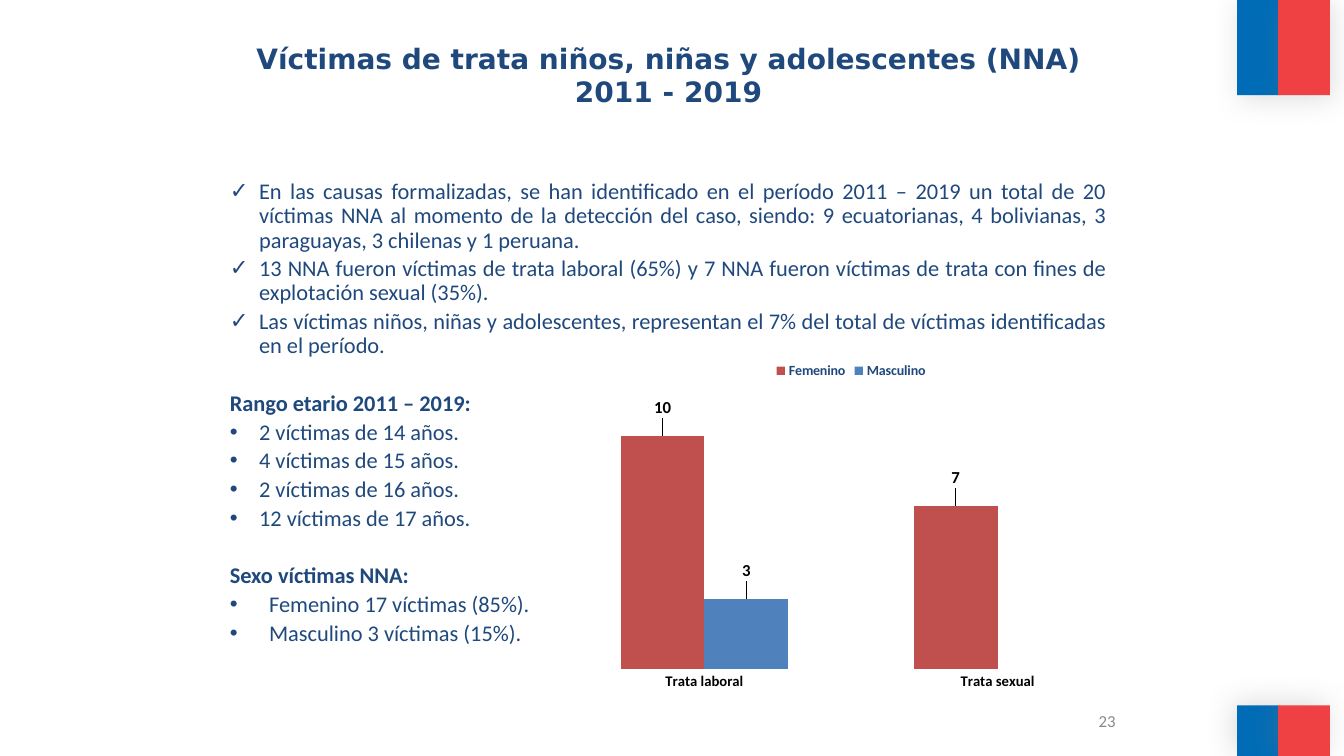
from copy import deepcopy

from pptx import Presentation
from pptx import util as u
from pptx.chart import data as chart_data
from pptx.dml.color import RGBColor
from pptx.enum import chart as ch, shapes, text
from pptx.oxml import parse_xml
from pptx.oxml.ns import nsdecls, qn

NAVY = RGBColor(0x1F, 0x49, 0x7D)
FLAG_BLUE = RGBColor(0x00, 0x6C, 0xB7)
FLAG_RED = RGBColor(0xEF, 0x41, 0x44)
GREY = RGBColor(0x89, 0x89, 0x89)
BLACK = RGBColor(0, 0, 0)
FEMALE_RED = RGBColor(0xC0, 0x50, 0x4D)
MALE_BLUE = RGBColor(0x4F, 0x81, 0xBD)

FINDINGS = [
    "En las causas formalizadas, se han identificado en el período 2011 – 2019 un total de 20 víctimas NNA "
    "al momento de la detección del caso, siendo: 9 ecuatorianas, 4 bolivianas, 3 paraguayas, 3 chilenas y 1 peruana.",
    "13 NNA fueron víctimas de trata laboral (65%) y 7 NNA fueron víctimas de trata con fines de explotación sexual (35%).",
    "Las víctimas niños, niñas y adolescentes, representan el 7% del total de víctimas identificadas en el período.",
]
AGES = [(2, 14), (4, 15), (2, 16), (12, 17)]
SEXES = ["Femenino 17 víctimas (85%).", "Masculino 3 víctimas (15%)."]


def style_font(font, size, color, bold=False, name="Calibri"):
    font.size, font.bold, font.name = u.Pt(size), bold, name
    font.color.rgb = color


def write(paragraph, words, size=16, color=NAVY, bold=False, name="Calibri",
          align=text.PP_ALIGN.JUSTIFY, bullet=None, indent=0, before=0, spacing=None):
    """Fill one paragraph and format it."""
    paragraph.text = words
    props = paragraph._p.get_or_add_pPr()
    props.set("marL", str(u.Inches(indent)))
    props.set("indent", str(-u.Inches(indent)))
    mark = f'<a:buChar {nsdecls("a")} char="{bullet}"/>' if bullet else f'<a:buNone {nsdecls("a")}/>'
    props.append(parse_xml(mark))
    paragraph.alignment = align
    paragraph.space_before = u.Pt(before)
    paragraph.line_spacing = spacing
    for run in paragraph.runs:
        style_font(run.font, size, color, bold, name)
    for line_break in paragraph._p.findall(qn("a:br")):
        line_break.insert(0, deepcopy(paragraph.runs[0]._r.rPr))


def manual_layout(**shares):
    parts = "".join(f'<c:{key} val="{value}"/>' for key, value in shares.items())
    return parse_xml(f'<c:layout {nsdecls("c")}><c:manualLayout>{parts}</c:manualLayout></c:layout>')


class SlideBuilder:
    """Places elements in percent of the slide's width and height."""

    def __init__(self, deck):
        self.width, self.height = deck.slide_width, deck.slide_height
        self.slide = deck.slides.add_slide(deck.slide_layouts[1])

    def area(self, x, y, w, h):
        return [round(share * side / 100) for share, side in
                zip((x, y, w, h), (self.width, self.height) * 2)]

    def placeholder(self, index, *area):
        holder = self.slide.placeholders[index]
        holder.left, holder.top, holder.width, holder.height = self.area(*area)
        frame = holder.text_frame
        frame.auto_size = text.MSO_AUTO_SIZE.NONE
        frame.vertical_anchor = text.MSO_ANCHOR.TOP
        return frame

    def flag_band(self, color, angle, *area):
        band = self.slide.shapes.add_shape(shapes.MSO_SHAPE.RECTANGLE, *self.area(*area))
        band.fill.solid()
        band.fill.fore_color.rgb = color
        band.line.fill.background()
        band.shadow.inherit = False
        band._element.spPr.find(qn("a:effectLst")).append(parse_xml(
            f'<a:outerShdw {nsdecls("a")} blurRad="{u.Pt(20)}" dist="{u.Pt(3)}" dir="{angle * 60000}" '
            'rotWithShape="0"><a:srgbClr val="808080"><a:alpha val="25000"/></a:srgbClr></a:outerShdw>'))

    def label(self, words, *area, **style):
        frame = self.slide.shapes.add_textbox(*self.area(*area)).text_frame
        frame.word_wrap = True
        frame.vertical_anchor = text.MSO_ANCHOR.MIDDLE
        write(frame.paragraphs[0], words, **style)

    def column_chart(self, categories, series, *area):
        """series: (name, values, colour) for each set of columns."""
        values = chart_data.CategoryChartData()
        values.categories = categories
        for name, counts, _ in series:
            values.add_series(name, counts)
        chart = self.slide.shapes.add_chart(
            ch.XL_CHART_TYPE.COLUMN_CLUSTERED, *self.area(*area), values).chart
        style_font(chart.font, 10, BLACK)
        chart.has_title = False
        chart.has_legend = True
        chart.legend.position = ch.XL_LEGEND_POSITION.TOP
        chart.legend.include_in_layout = False
        style_font(chart.legend.font, 10, NAVY, True)

        # Axes
        chart.value_axis.visible = False
        chart.value_axis.has_major_gridlines = False
        chart.value_axis.minimum_scale, chart.value_axis.maximum_scale = 0, 12
        axis = chart.category_axis
        axis.major_tick_mark = ch.XL_TICK_MARK.NONE
        axis.format.line.fill.background()
        style_font(axis.tick_labels.font, 10.5, BLACK, True)

        # Columns, with their values raised above them
        plot = chart.plots[0]
        plot.gap_width, plot.overlap, plot.vary_by_categories = 150, 0, False
        for columns, (_, counts, color) in zip(plot.series, series):
            columns.format.fill.solid()
            columns.format.fill.fore_color.rgb = color
            for index, count in enumerate(counts):
                if count is not None:
                    value_label = columns.points[index].data_label
                    style_font(value_label.font, 12, BLACK, True)
                    value_label.position = ch.XL_LABEL_POSITION.OUTSIDE_END
            for point_label in columns._element.iter(qn("c:dLbl")):
                point_label.find(qn("c:idx")).addnext(manual_layout(x=0, y=-0.04))

        plot_area = chart._chartSpace.chart.plotArea
        for old_layout in plot_area.findall(qn("c:layout")):
            plot_area.remove(old_layout)
        plot_area.insert(0, manual_layout(layoutTarget="inner", xMode="edge", yMode="edge",
                                          x=0.02, y=0.11, w=0.96, h=0.81))


def main():
    deck = Presentation()
    deck.slide_width, deck.slide_height = u.Inches(13.33), u.Inches(7.5)
    page = SlideBuilder(deck)

    # Flag bands in the right corners
    for top, height, angle in ((0, 12.6, 45), (93.3, 6.7, 215)):
        page.flag_band(FLAG_BLUE, angle, 92.05, top, 3.1, height)
        page.flag_band(FLAG_RED, angle, 95.1, top, 3.85, height)

    # Title
    heading = page.placeholder(0, 16, 4.8, 67.5, 16.7)
    write(heading.paragraphs[0], "Víctimas de trata niños, niñas y adolescentes (NNA)\v2011 - 2019",
          size=20, bold=True, name="DejaVu Sans", align=text.PP_ALIGN.CENTER)

    # Findings, ages and sexes
    item = dict(indent=0.29, before=3.2)
    section = dict(bold=True, before=24)
    lines = [(finding, dict(item, bullet="✓")) for finding in FINDINGS]
    lines[0][1]["before"] = 0
    lines.append(("Rango etario 2011 – 2019:", section))
    lines += [(f"{count} víctimas de {age} años.", dict(item, bullet="•")) for count, age in AGES]
    lines.append(("Sexo víctimas NNA:", section))
    lines += [(sex, dict(item, bullet="•", indent=0.39)) for sex in SEXES]
    body = page.placeholder(1, 16.35, 23.2, 66.75, 69.3)
    for number, (words, style) in enumerate(lines):
        paragraph = body.add_paragraph() if number else body.paragraphs[0]
        write(paragraph, words, spacing=0.9, **style)

    # Victims by kind of trafficking and sex
    page.column_chart(["Trata laboral", "Trata sexual"],
                      [("Femenino", (10, 7), FEMALE_RED), ("Masculino", (3, None), MALE_BLUE)],
                      40.6, 46.5, 45.45, 45.6)

    # Page number
    page.label("23", 66.25, 92.7, 17.5, 5.3, size=12, color=GREY, align=text.PP_ALIGN.RIGHT)

    deck.save("out.pptx")


if __name__ == "__main__":
    main()
